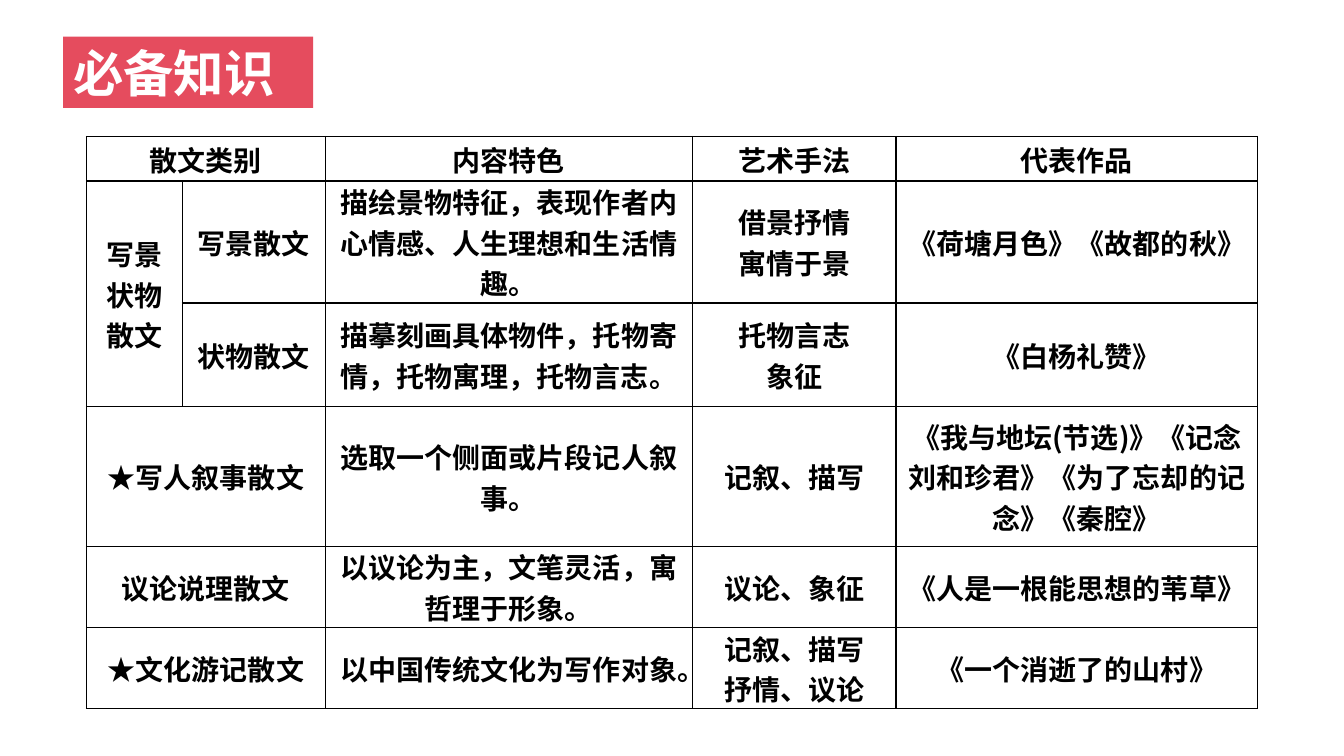
from lxml.etree import SubElement as Sub
from pptx import Presentation
from pptx.dml.color import RGBColor as Rgb
from pptx.enum.text import MSO_ANCHOR as Anchor, MSO_AUTO_SIZE as Auto, PP_ALIGN as Align
from pptx.oxml.ns import qn
from pptx.util import Cm, Pt

COLORS = {"red": "E54C5E", "white": "FFFFFF", "black": "000000"}
FONT = "Noto Sans CJK SC"

WIDTHS = [2.41, 3.61, 9.25, 5.13, 9.12]
HEIGHTS = [1.12, 2.62, 2.62, 3.51, 1.75, 1.75]
# None marks a cell that is covered by a merged neighbour.
ROWS = [
    ["散文类别", None, "内容特色", "艺术手法", "代表作品"],
    ["写景状物散文", "写景散文", "描绘景物特征，表现作者内心情感、人生理想和生活情趣。",
     "借景抒情\n寓情于景", "《荷塘月色》《故都的秋》"],
    [None, "状物散文", "描摹刻画具体物件，托物寄情，托物寓理，托物言志。",
     "托物言志\n象征", "《白杨礼赞》"],
    ["★写人叙事散文", None, "选取一个侧面或片段记人叙事。",
     "记叙、描写", "《我与地坛(节选)》《记念刘和珍君》《为了忘却的记念》《秦腔》"],
    ["议论说理散文", None, "以议论为主，文笔灵活，寓哲理于形象。",
     "议论、象征", "《人是一根能思想的苇草》"],
    ["★文化游记散文", None, "以中国传统文化为写作对象。",
     "记叙、描写\n抒情、议论", "《一个消逝了的山村》"],
]
MERGES = [((0, 0), (0, 1)), ((1, 0), (2, 0)), ((3, 0), (3, 1)),
          ((4, 0), (4, 1)), ((5, 0), (5, 1))]


class Page:
    """Holds the text style and the slide being built."""

    def __init__(self, deck):
        self.slide = deck.slides.add_slide(deck.slide_layouts[5])

    def style(self, frame, size, color, align):
        for para in frame.paragraphs:
            para.alignment = align
            for run in para.runs:
                font = run.font
                font.size, font.bold, font.name = Pt(size), True, FONT
                font.color.rgb = Rgb.from_string(COLORS[color])
                Sub(font._element, qn("a:ea"), typeface=FONT)

    def title(self, text, left, top, width, height):
        box = self.slide.shapes.title
        box.left, box.top, box.width, box.height = map(Cm, (left, top, width, height))
        box.fill.solid()
        box.fill.fore_color.rgb = Rgb.from_string(COLORS["red"])
        frame = box.text_frame
        frame.text = text
        frame.auto_size = Auto.NONE
        frame.vertical_anchor = Anchor.MIDDLE
        self.style(frame, 36, "white", Align.LEFT)

    def border(self, cell):
        props = cell._tc.get_or_add_tcPr()
        for side in ("lnL", "lnR", "lnT", "lnB"):
            line = Sub(props, qn(f"a:{side}"), w=str(Pt(1)))
            Sub(Sub(line, qn("a:solidFill")), qn("a:srgbClr"), val=COLORS["black"])

    def cell(self, cell, text):
        self.border(cell)
        cell.fill.background()
        cell.margin_left = cell.margin_right = Cm(0.18)
        cell.margin_top = cell.margin_bottom = 0
        cell.vertical_anchor = Anchor.MIDDLE
        if text:
            cell.text_frame.text = text
        self.style(cell.text_frame, 20, "black", Align.CENTER)

    def table(self, rows, left, top):
        size = Cm(sum(WIDTHS)), Cm(sum(HEIGHTS))
        grid = self.slide.shapes.add_table(
            len(rows), len(WIDTHS), Cm(left), Cm(top), *size).table
        grid.first_row = grid.horz_banding = False
        for col, width in zip(grid.columns, WIDTHS):
            col.width = Cm(width)
        for row, height in zip(grid.rows, HEIGHTS):
            row.height = Cm(height)
        for r, row in enumerate(rows):
            for c, text in enumerate(row):
                self.cell(grid.cell(r, c), text)
        for start, end in MERGES:
            grid.cell(*start).merge(grid.cell(*end))


def main():
    deck = Presentation()
    deck.slide_width, deck.slide_height = Cm(33.87), Cm(19.05)
    page = Page(deck)
    page.title("必备知识", 1.59, 0.92, 6.3, 1.8)
    page.table(ROWS, 2.18, 3.44)
    deck.save("out.pptx")


if __name__ == "__main__":
    main()
